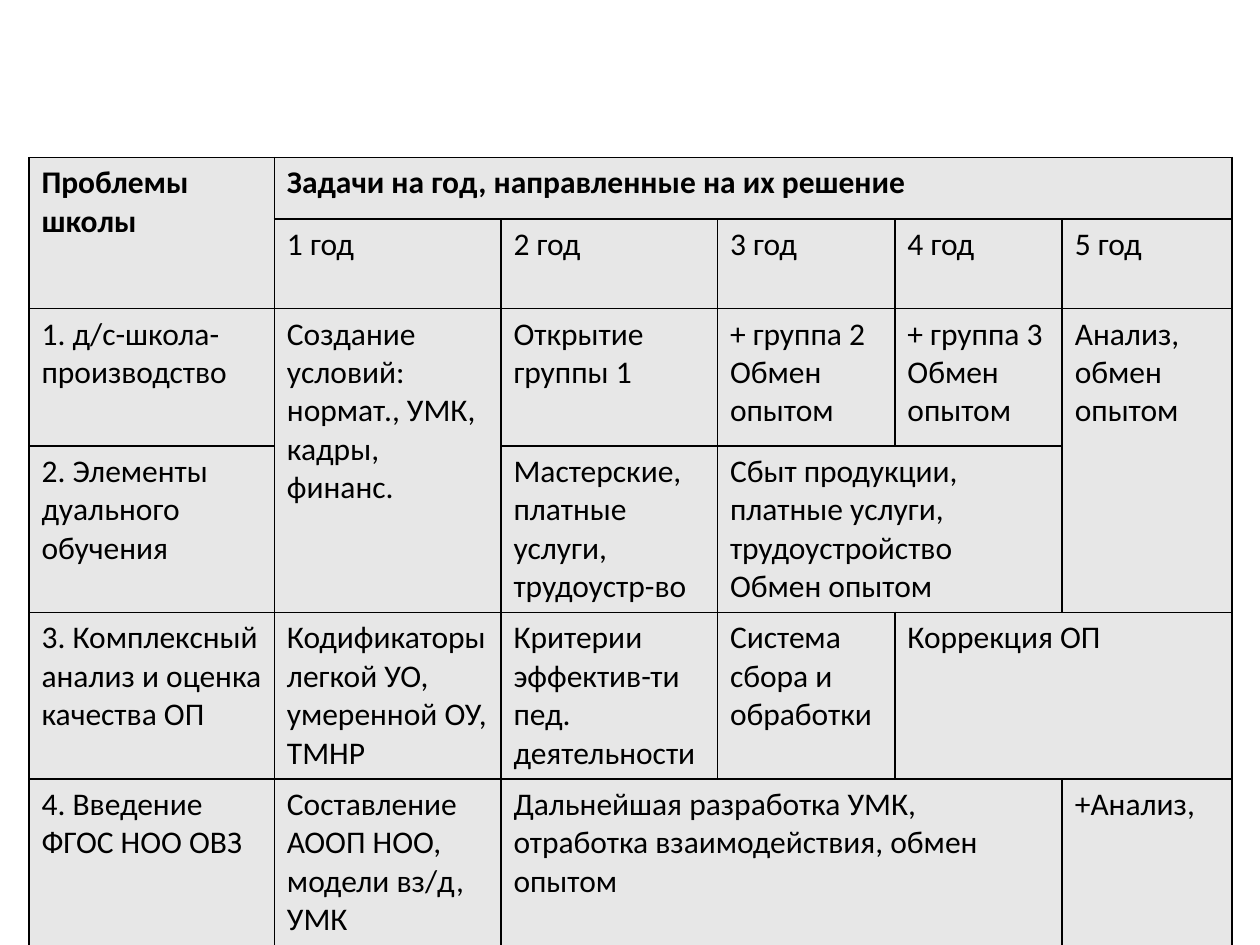
import pptx
import pptx.dml.color
import pptx.oxml
import pptx.oxml.ns
import pptx.util
from pptx.util import Inches

BLACK = pptx.dml.color.RGBColor(0x00, 0x00, 0x00)
CELL_GRAY = pptx.dml.color.RGBColor(0xE7, 0xE7, 0xE7)
FONT_FORMAT = {"name": "Calibri", "size": pptx.util.Pt(18), "bold": False}
HEADING_FORMAT = {**FONT_FORMAT, "bold": True}
BORDER_SIDES = ("lnL", "lnR", "lnT", "lnB")
BORDER_WIDTH = pptx.util.Pt(1)

PLAN_BOX = (0.23, 1.25, 9.55, 5.69)
COLUMN_WIDTHS = (1.95, 1.8, 1.72, 1.41, 1.33, 1.35)
ROW_HEIGHTS = (0.49, 0.47, 1.09, 1.3, 1.25, 1.09)
PLAN_ROWS = (
    ("Проблемы школы", "Задачи на год, направленные на их решение", "", "", "", ""),
    ("", "1 год", "2 год", "3 год", "4 год", "5 год"),
    (
        "1. д/с-школа-производство",
        "Создание условий: нормат., УМК, кадры, финанс.",
        "Открытие группы 1",
        "+ группа 2\nОбмен опытом",
        "+ группа 3\nОбмен опытом",
        "Анализ, обмен опытом",
    ),
    (
        "2. Элементы дуального обучения",
        "",
        "Мастерские, платные услуги, трудоустр-во",
        "Сбыт продукции, платные услуги, трудоустройство\nОбмен опытом",
        "",
        "",
    ),
    (
        "3. Комплексный анализ и оценка качества ОП",
        "Кодификаторы легкой УО, умеренной ОУ, ТМНР",
        "Критерии эффектив-ти пед. деятельности",
        "Система сбора и обработки",
        "Коррекция ОП",
        "",
    ),
    (
        "4. Введение ФГОС НОО ОВЗ",
        "Составление АООП НОО, модели вз/д, УМК",
        "Дальнейшая разработка УМК, отработка взаимодействия, обмен опытом",
        "",
        "",
        "+Анализ,",
    ),
)
MERGED_RANGES = (
    ((0, 0), (1, 0)),
    ((0, 1), (0, 5)),
    ((2, 1), (3, 1)),
    ((2, 5), (3, 5)),
    ((3, 3), (3, 4)),
    ((4, 4), (4, 5)),
    ((5, 2), (5, 4)),
)


def add_borders(cell):
    properties = cell._tc.get_or_add_tcPr()
    for side in BORDER_SIDES:
        properties.append(pptx.oxml.parse_xml(
            f'<a:{side} {pptx.oxml.ns.nsdecls("a")} w="{BORDER_WIDTH}">'
            f'<a:solidFill><a:srgbClr val="{BLACK}"/></a:solidFill></a:{side}>'
        ))


def format_cell(cell, text, font_format):
    add_borders(cell)
    cell.fill.solid()
    cell.fill.fore_color.rgb = CELL_GRAY
    cell.text = text
    for paragraph in cell.text_frame.paragraphs:
        for name, value in font_format.items():
            setattr(paragraph.font, name, value)
        for run in paragraph.runs:
            for name, value in font_format.items():
                setattr(run.font, name, value)
            run.font.color.rgb = BLACK


def add_plan_table(slide, left, top, width, height):
    table = slide.shapes.add_table(
        len(ROW_HEIGHTS), len(COLUMN_WIDTHS),
        Inches(left), Inches(top), Inches(width), Inches(height),
    ).table
    for column, share in zip(table.columns, COLUMN_WIDTHS):
        column.width = Inches(width * share / sum(COLUMN_WIDTHS))
    for row, share in zip(table.rows, ROW_HEIGHTS):
        row.height = Inches(height * share / sum(ROW_HEIGHTS))
    for row_index, texts in enumerate(PLAN_ROWS):
        font_format = HEADING_FORMAT if row_index == 0 else FONT_FORMAT
        for column_index, text in enumerate(texts):
            format_cell(table.cell(row_index, column_index), text, font_format)
    for first, last in MERGED_RANGES:
        table.cell(*first).merge(table.cell(*last))


def main():
    presentation = pptx.Presentation()
    presentation.slide_width = Inches(10)
    presentation.slide_height = Inches(7.5)
    slide = presentation.slides.add_slide(presentation.slide_layouts[6])
    add_plan_table(slide, *PLAN_BOX)
    presentation.save("out.pptx")


if __name__ == "__main__":
    main()
